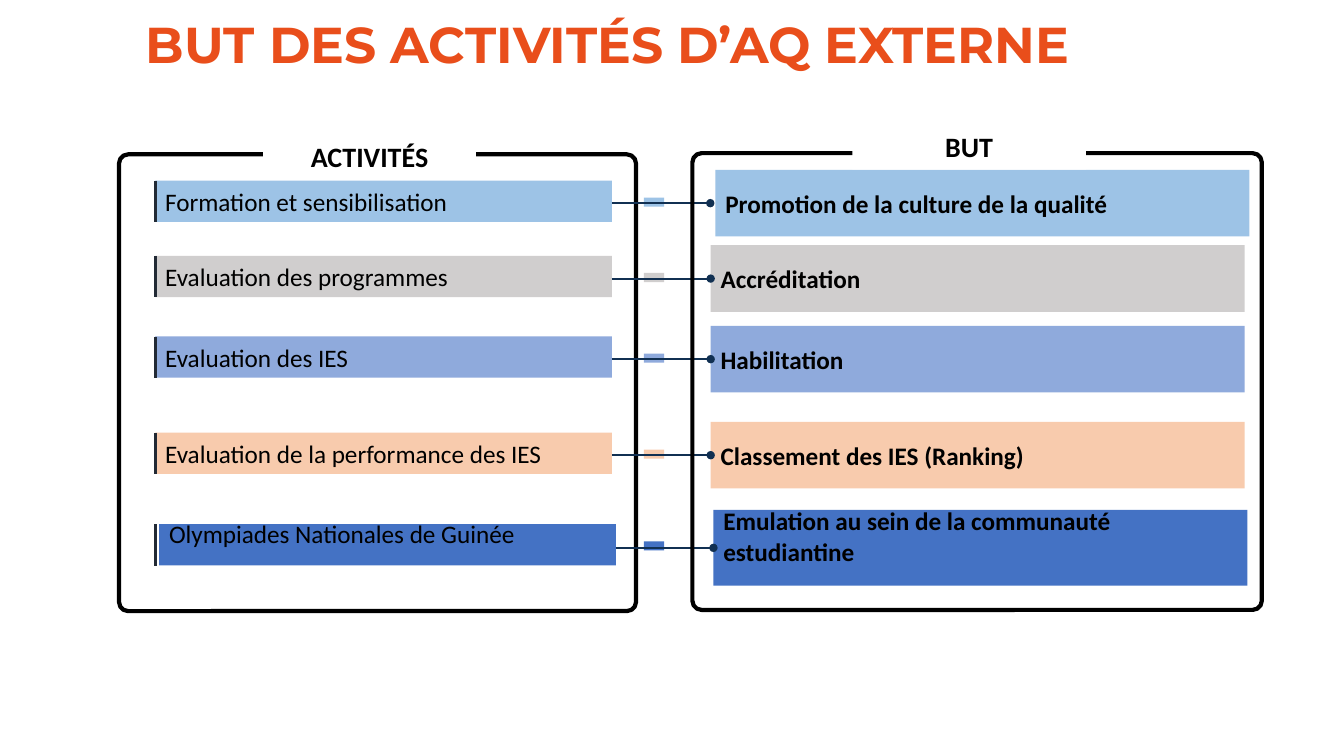
from dataclasses import dataclass

from lxml import etree
from pptx import Presentation
from pptx.dml.color import RGBColor
from pptx.enum.shapes import MSO_CONNECTOR, MSO_SHAPE
from pptx.enum.text import MSO_ANCHOR as Anchor, PP_ALIGN as Align
from pptx.oxml.ns import qn
from pptx.util import Cm, Pt


@dataclass(frozen=True)
class Theme:
    title: str = "E94E1B"
    ink: str = "000000"
    paper: str = "FFFFFF"
    tick: str = "222A35"
    link: str = "113052"
    blue: str = "9DC3E6"
    grey: str = "D0CECE"
    indigo: str = "8FAADC"
    peach: str = "F8CBAD"
    royal: str = "4472C4"
    title_font: str = "Montserrat"
    body_font: str = "Calibri"
    title_size: int = 36
    heading_size: int = 20
    body_size: int = 18
    frame_line: float = 3
    tick_line: float = 2
    link_line: float = 1.5


@dataclass(frozen=True)
class Row:
    activity: str
    goal: str
    color: str
    top: float
    activity_left: float = 3.91
    goal_left: float = 17.91
    goal_rise: float = 0.27
    goal_height: float = 1.68
    bottom_inset: float = 0.13


THEME = Theme()
ROWS = [
    Row("Formation et sensibilisation", "Promotion de la culture de la qualité",
        THEME.blue, 4.55, goal_left=18.03),
    Row("Evaluation des programmes", "Accréditation", THEME.grey, 6.45),
    Row("Evaluation des IES", "Habilitation", THEME.indigo, 8.48),
    Row("Evaluation de la performance des IES", "Classement des IES (Ranking)",
        THEME.peach, 10.9),
    Row("Olympiades Nationales de Guinée",
        "Emulation au sein de la communauté estudiantine", THEME.royal, 13.21,
        activity_left=4.01, goal_left=17.98, goal_rise=0.36, goal_height=1.91,
        bottom_inset=0.72),
]
TICK_LEFT = 3.91
ACTIVITY_WIDTH, ACTIVITY_HEIGHT = 11.51, 1.04
GOAL_WIDTH = 13.46
LINK_LENGTH = 2.48
PILL_LEFT, PILL_DROP, PILL_WIDTH, PILL_HEIGHT = 16.23, 0.43, 0.51, 0.23


def write(shape, text, *, size=THEME.body_size, font=THEME.body_font,
          color=THEME.ink, bold=False, align=Align.LEFT, anchor=Anchor.MIDDLE,
          bottom_inset=0.13, line_spacing=1.0):
    frame = shape.text_frame
    frame.word_wrap = True
    frame.vertical_anchor = anchor
    frame.margin_bottom = Cm(bottom_inset)
    paragraph = frame.paragraphs[0]
    paragraph.alignment = align
    paragraph.line_spacing = line_spacing
    run = paragraph.add_run()
    run.text = text
    run.font.name = font
    run.font.size = Pt(size)
    run.font.bold = bold
    run.font.color.rgb = RGBColor.from_string(color)


def add_block(slide, left, top, width, height, color):
    block = slide.shapes.add_shape(
        MSO_SHAPE.RECTANGLE, Cm(left), Cm(top), Cm(width), Cm(height))
    block.shadow.inherit = False
    block.fill.solid()
    block.fill.fore_color.rgb = RGBColor.from_string(color)
    block.line.fill.background()
    return block


def add_line(slide, start, end, color, width, dotted_end=False):
    line = slide.shapes.add_connector(MSO_CONNECTOR.STRAIGHT, *start, *end)
    line.line.color.rgb = RGBColor.from_string(color)
    line.line.width = Pt(width)
    properties = line._element.spPr
    if dotted_end:
        etree.SubElement(properties.find(qn("a:ln")), qn("a:tailEnd"), type="oval")
    etree.SubElement(properties, qn("a:effectLst"))
    return line


def add_title(slide, left, top, width, height):
    title = slide.shapes.add_textbox(Cm(left), Cm(top), Cm(width), Cm(height))
    write(title, "BUT DES ACTIVITÉS D’AQ EXTERNE", size=THEME.title_size,
          font=THEME.title_font, color=THEME.title, bold=True, line_spacing=0.9)


def add_panel(slide, left, top, width, height, heading, heading_width, heading_rise):
    panel = slide.shapes.add_shape(
        MSO_SHAPE.ROUNDED_RECTANGLE, Cm(left), Cm(top), Cm(width), Cm(height))
    panel.shadow.inherit = False
    panel.adjustments[0] = 0.02
    panel.fill.background()
    panel.line.color.rgb = RGBColor.from_string(THEME.ink)
    panel.line.width = Pt(THEME.frame_line)
    label = add_block(slide, left + (width - heading_width) / 2 - 0.2,
                      top - heading_rise, heading_width, 1.12, THEME.paper)
    write(label, heading, size=THEME.heading_size, bold=True,
          align=Align.CENTER, anchor=Anchor.TOP)


def add_row(slide, row):
    activity = add_block(slide, row.activity_left, row.top,
                         ACTIVITY_WIDTH, ACTIVITY_HEIGHT, row.color)
    write(activity, row.activity, bottom_inset=row.bottom_inset)
    add_line(slide, (Cm(TICK_LEFT), activity.top),
             (Cm(TICK_LEFT), activity.top + activity.height),
             THEME.tick, THEME.tick_line)
    add_block(slide, PILL_LEFT, row.top + PILL_DROP, PILL_WIDTH, PILL_HEIGHT, row.color)
    goal = add_block(slide, row.goal_left, row.top - row.goal_rise,
                     GOAL_WIDTH, row.goal_height, row.color)
    write(goal, row.goal, bold=True, bottom_inset=row.bottom_inset)
    start = activity.left + activity.width
    end = start + Cm(LINK_LENGTH)
    middle = goal.top + goal.height // 2
    link = add_line(slide, (start, middle), (end, middle),
                    THEME.link, THEME.link_line, dotted_end=True)
    if abs(goal.left - end) < Cm(0.1):
        link.end_connect(goal, 1)


def main():
    presentation = Presentation()
    presentation.slide_width = Cm(33.87)
    presentation.slide_height = Cm(19.05)
    slide = presentation.slides.add_slide(presentation.slide_layouts[6])
    add_title(slide, 3.43, 0.38, 29.21, 1.6)
    add_panel(slide, 3, 3.89, 13.03, 11.51, "ACTIVITÉS", 5.36, 0.51)
    for row in ROWS:
        add_row(slide, row)
    add_panel(slide, 17.45, 3.86, 14.35, 11.51, "BUT", 5.89, 0.71)
    presentation.save("out.pptx")


if __name__ == "__main__":
    main()
